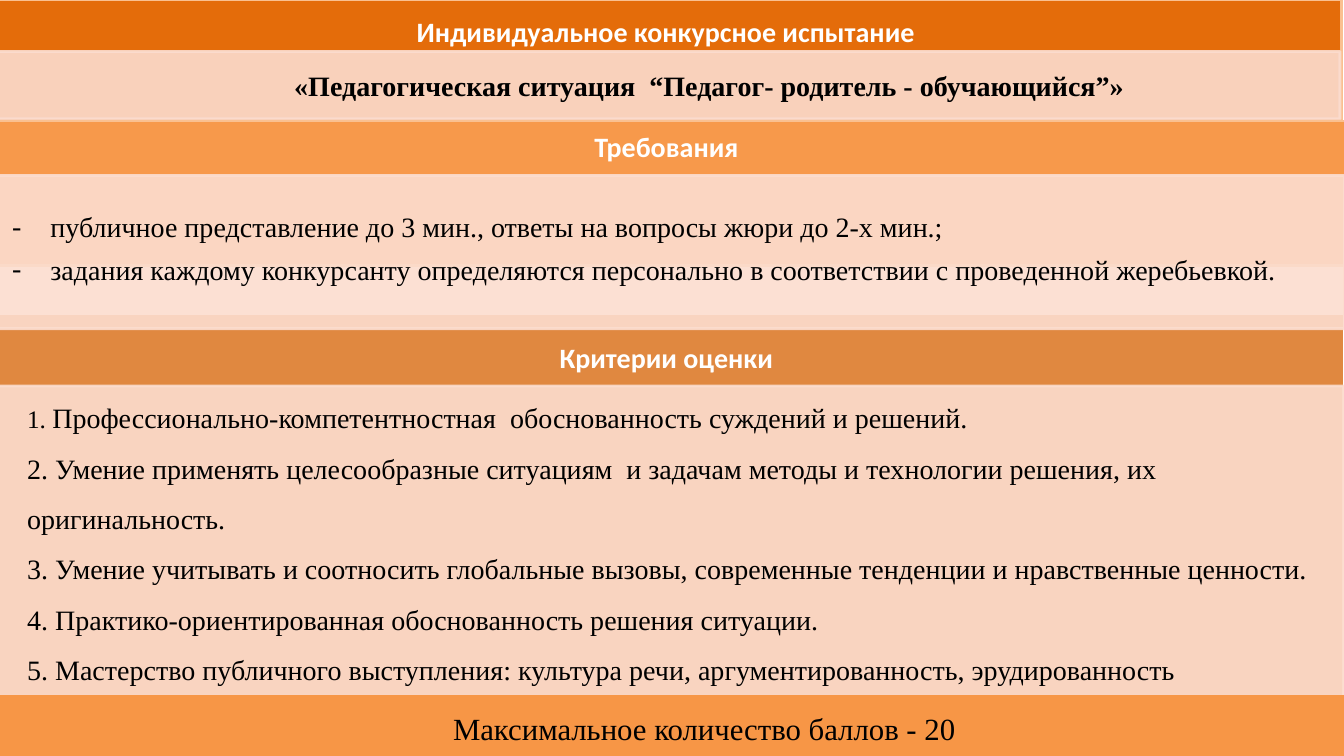
from dataclasses import dataclass

from lxml import etree
from pptx import Presentation
from pptx.dml.color import RGBColor
from pptx.enum.shapes import MSO_SHAPE
from pptx.enum.text import MSO_ANCHOR, PP_ALIGN
from pptx.oxml.ns import qn
from pptx.util import Inches, Pt

RECTANGLE = MSO_SHAPE.RECTANGLE
TOP, MIDDLE = MSO_ANCHOR.TOP, MSO_ANCHOR.MIDDLE
LEFT, CENTER = PP_ALIGN.LEFT, PP_ALIGN.CENTER
SERIF, SANS = "Times New Roman", "Calibri"
WIDTH, HEIGHT = Inches(13.333), Inches(7.5)
COLORS = {
    "title": "E46C0A",
    "requirements": "F7994B",
    "criteria": "E08840",
    "footer": "F79646",
    "edge": "FAC090",
    "panel": "FCDDCF",
    "white": "FFFFFF",
    "black": "000000",
}


@dataclass
class Area:
    """Left, top, width and height in percent of the slide's size."""
    left: float
    top: float
    width: float
    height: float

    def lengths(self) -> tuple[int, int, int, int]:
        return (int(WIDTH * self.left / 100), int(HEIGHT * self.top / 100),
                int(WIDTH * self.width / 100), int(HEIGHT * self.height / 100))


@dataclass
class Band:
    area: Area
    fill: str
    edge: str
    opacity: int = 100


@dataclass
class Heading:
    area: Area
    text: str
    size: int = 20
    font: str = SANS
    color: str = "white"
    bold: bool = True


# Bands and panels, from back to front
BANDS = [
    Band(Area(-0.08, 41.47, 100.13, 51.6), "criteria", "white"),
    Band(Area(-0.68, 51.07, 100.65, 42.93), "panel", "panel", 90),
    Band(Area(-0.3, 0, 100.13, 20.53), "title", "edge"),
    Band(Area(-0.3, 6.8, 100, 8.93), "panel", "panel", 90),
    Band(Area(-0.6, 16, 100.73, 19.07), "requirements", "edge"),
    Band(Area(-0.6, 23.2, 100.65, 20.27), "panel", "panel", 90),
    Band(Area(-0.38, 92.13, 100.43, 8.53), "footer", "footer"),
]
HEADINGS = [
    Heading(Area(27.45, 1.2, 44.18, 5.87), "Индивидуальное конкурсное испытание"),
    Heading(Area(42.53, 16.53, 14.1, 5.87), "Требования"),
    Heading(Area(36.23, 44.4, 26.7, 5.87), "Критерии оценки"),
    Heading(Area(31.88, 93.2, 41.03, 6.27), "Максимальное количество баллов - 20",
            22, SERIF, "black", False),
]
SUBJECT = "«Педагогическая ситуация  “Педагог- родитель - обучающийся”»"
REQUIREMENTS = [
    "публичное представление до 3 мин., ответы на вопросы жюри до 2-х мин.;",
    "задания каждому конкурсанту определяются персонально в соответствии с проведенной жеребьевкой.",
]
CRITERIA = [
    "Профессионально-компетентностная  обоснованность суждений и решений.",
    "Умение применять целесообразные ситуациям  и задачам методы и технологии решения, их оригинальность.",
    "Умение учитывать и соотносить глобальные вызовы, современные тенденции и нравственные ценности.",
    "Практико-ориентированная обоснованность решения ситуации.",
    "Мастерство публичного выступления: культура речи, аргументированность, эрудированность",
]
CRITERIA_AREA = Area(1.28, 50.13, 98.78, 45.73)


def rgb(name: str) -> RGBColor:
    return RGBColor.from_string(COLORS[name])


def add_band(page, band: Band):
    box = page.shapes.add_shape(RECTANGLE, *band.area.lengths())
    box.shadow.inherit = False
    box.fill.solid()
    box.fill.fore_color.rgb = rgb(band.fill)
    box.line.color.rgb = rgb(band.edge)
    box.line.width = Pt(2)
    if band.opacity < 100:
        for color in box.fill._xPr.iter(qn("a:srgbClr")):
            etree.SubElement(color, qn("a:alpha"), val=str(band.opacity * 1000))
    return box


def set_frame(box, *, insets=(0.1, 0.05, 0.1, 0.05), anchor=TOP):
    frame = box.text_frame
    frame.word_wrap = True
    frame.vertical_anchor = anchor
    (frame.margin_left, frame.margin_top,
     frame.margin_right, frame.margin_bottom) = map(Inches, insets)
    return frame


def add_span(para, text: str, *, size=20, font=SERIF, color="black", bold=False) -> None:
    span = para.add_run()
    span.text = text
    span.font.size = Pt(size)
    span.font.name = font
    span.font.bold = bold
    span.font.color.rgb = rgb(color)


def next_para(frame, index: int, *, align=LEFT, spacing=1.0, after=0.0):
    para = frame.add_paragraph() if index else frame.paragraphs[0]
    para.alignment = align
    para.line_spacing = spacing
    para.space_after = Pt(after)
    return para


def add_dash(para) -> None:
    properties = para._p.get_or_add_pPr()
    properties.set("marL", str(Inches(0.38)))
    properties.set("indent", str(-Inches(0.38)))
    etree.SubElement(properties, qn("a:buFont"), typeface=SERIF)
    etree.SubElement(properties, qn("a:buChar"), char="-")


def main() -> None:
    deck = Presentation()
    deck.slide_width, deck.slide_height = WIDTH, HEIGHT
    page = deck.slides.add_slide(deck.slide_layouts[6])

    boxes = [add_band(page, band) for band in BANDS]
    subject_box, requirements_box = boxes[3], boxes[5]

    # Subject of the test
    frame = set_frame(subject_box, insets=(0.98, 0.03, 0.16, 0.03), anchor=MIDDLE)
    add_span(next_para(frame, 0, align=CENTER), SUBJECT, bold=True)

    # Requirements
    frame = set_frame(requirements_box, insets=(0.2, 0.04, 0.2, 0.12), anchor=MIDDLE)
    for index, text in enumerate(REQUIREMENTS):
        para = next_para(frame, index, after=0 if index else 6.3)
        add_dash(para)
        add_span(para, text)

    # Criteria, with a smaller first number
    frame = set_frame(page.shapes.add_textbox(*CRITERIA_AREA.lengths()))
    for index, text in enumerate(CRITERIA):
        para = next_para(frame, index, spacing=1.5)
        add_span(para, f"{index + 1}. ", size=20 if index else 18)
        add_span(para, text)

    # Headings and the score
    for heading in HEADINGS:
        frame = set_frame(page.shapes.add_textbox(*heading.area.lengths()))
        add_span(next_para(frame, 0, align=CENTER), heading.text, size=heading.size,
                 font=heading.font, color=heading.color, bold=heading.bold)

    deck.save("out.pptx")


if __name__ == "__main__":
    main()
